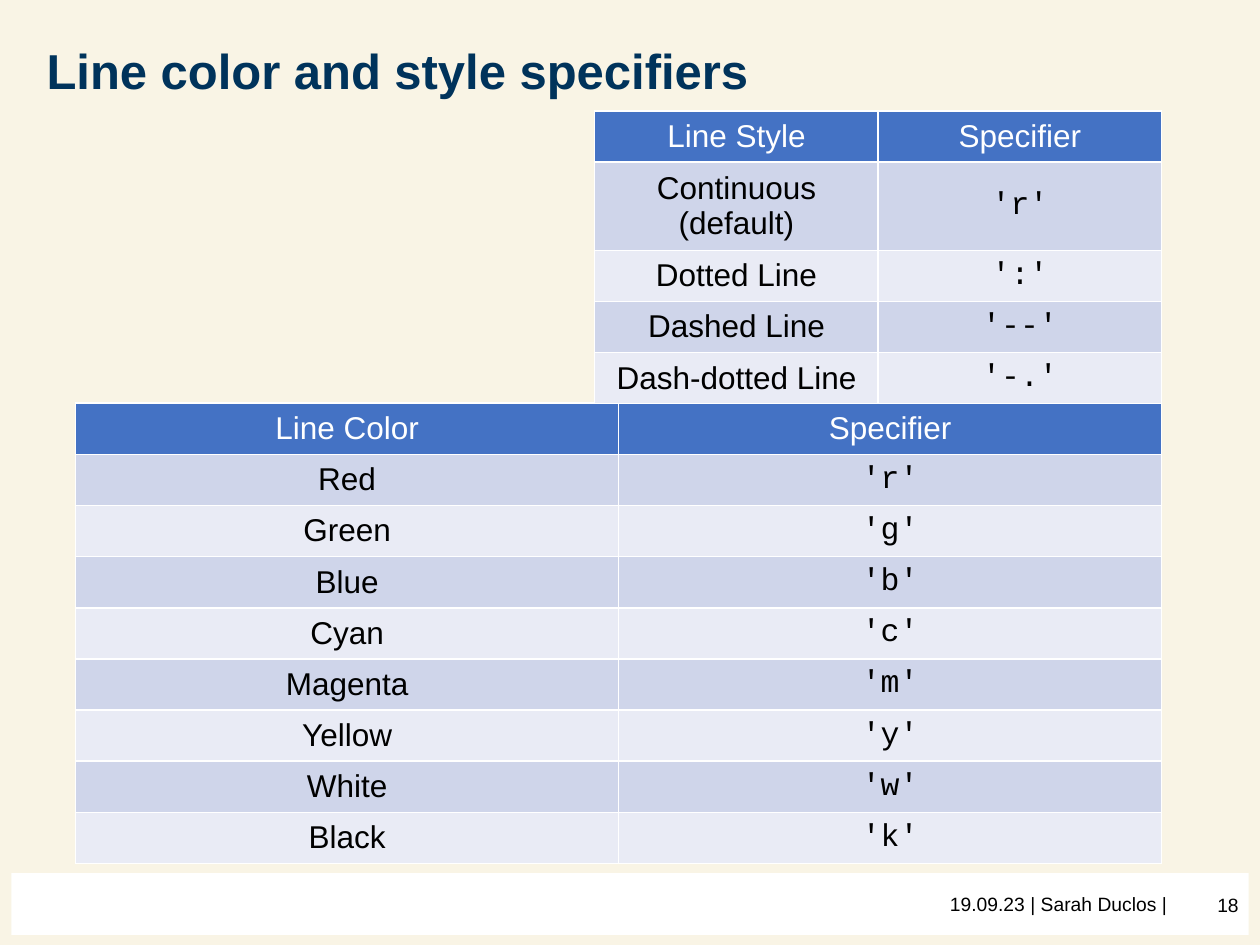
"""Builds a slide with tables of line color and line style specifiers."""
from pptx import Presentation
from pptx.dml.color import RGBColor
from pptx.enum.shapes import MSO_SHAPE
from pptx.enum.text import MSO_ANCHOR, PP_ALIGN
from pptx.util import Inches, Pt

COLORS = {
    "background": "F9F4E5",
    "white": "FFFFFF",
    "black": "000000",
    "title": "00335B",
    "header": "4472C4",
    "odd_row": "CFD5EA",
    "even_row": "E9EBF5",
}
ROW_HEIGHT = 0.406

LINE_COLORS = [
    ("Line Color", "Specifier"),
    ("Red", "'r'"),
    ("Green", "'g'"),
    ("Blue", "'b'"),
    ("Cyan", "'c'"),
    ("Magenta", "'m'"),
    ("Yellow", "'y'"),
    ("White", "'w'"),
    ("Black", "'k'"),
]
LINE_STYLES = [
    ("Line Style", "Specifier"),
    ("Continuous (default)", "'r'"),
    ("Dotted Line", "':'"),
    ("Dashed Line", "'--'"),
    ("Dash-dotted Line", "'-.'"),
]


def format_text(text_frame, size, color, alignment=PP_ALIGN.LEFT, name="Arial", bold=False):
    paragraph = text_frame.paragraphs[0]
    paragraph.alignment = alignment
    font = paragraph.runs[0].font
    font.name = name
    font.size = Pt(size)
    font.bold = bold
    font.color.rgb = RGBColor.from_string(COLORS[color])


def add_specifier_table(slide, rows, left, top, width):
    shape = slide.shapes.add_table(
        len(rows), 2, Inches(left), Inches(top), Inches(width), Inches(ROW_HEIGHT * len(rows))
    )
    for row_index, texts in enumerate(rows):
        is_header = row_index == 0
        fill = "header" if is_header else "odd_row" if row_index % 2 else "even_row"
        for column_index, text in enumerate(texts):
            cell = shape.table.cell(row_index, column_index)
            cell.fill.solid()
            cell.fill.fore_color.rgb = RGBColor.from_string(COLORS[fill])
            cell.vertical_anchor = MSO_ANCHOR.MIDDLE
            cell.text_frame.text = text
            is_code = column_index == 1 and not is_header
            format_text(
                cell.text_frame,
                18,
                "white" if is_header else "black",
                PP_ALIGN.CENTER,
                "Courier New" if is_code else "Arial",
            )
    return shape.table


presentation = Presentation()
presentation.slide_width = Inches(10)
presentation.slide_height = Inches(7.5)
slide = presentation.slides.add_slide(presentation.slide_layouts[5])
slide.background.fill.solid()
slide.background.fill.fore_color.rgb = RGBColor.from_string(COLORS["background"])

footer_band = slide.shapes.add_shape(
    MSO_SHAPE.RECTANGLE, Inches(0.09), Inches(6.93), Inches(9.82), Inches(0.49)
)
footer_band.shadow.inherit = False
footer_band.fill.solid()
footer_band.fill.fore_color.rgb = RGBColor.from_string(COLORS["white"])
footer_band.line.fill.background()

footer_items = [
    ("19.09.23", 7.44, 7.03, 0.9, PP_ALIGN.LEFT),
    ("| Sarah Duclos |", 8.08, 7.03, 1.5, PP_ALIGN.LEFT),
    ("18", 9.33, 7.04, 0.6, PP_ALIGN.RIGHT),
]
for text, left, top, width, alignment in footer_items:
    text_box = slide.shapes.add_textbox(Inches(left), Inches(top), Inches(width), Inches(0.4))
    text_box.text_frame.word_wrap = True
    text_box.text_frame.text = text
    format_text(text_box.text_frame, 11, "black", alignment)

title = slide.shapes.title
title.left, title.top = Inches(0.27), Inches(-0.14)
title.width, title.height = Inches(8.62), Inches(1.45)
title.text_frame.text = "Line color and style specifiers"
title.text_frame.vertical_anchor = MSO_ANCHOR.MIDDLE
title.text_frame.paragraphs[0].line_spacing = 0.9
format_text(title.text_frame, 28, "title", bold=True)

add_specifier_table(slide, LINE_COLORS, 0.6, 3.2, 8.62)
style_table = add_specifier_table(slide, LINE_STYLES, 4.72, 0.88, 4.5)
style_table.rows[1].height = Inches(0.66)

presentation.save("out.pptx")
